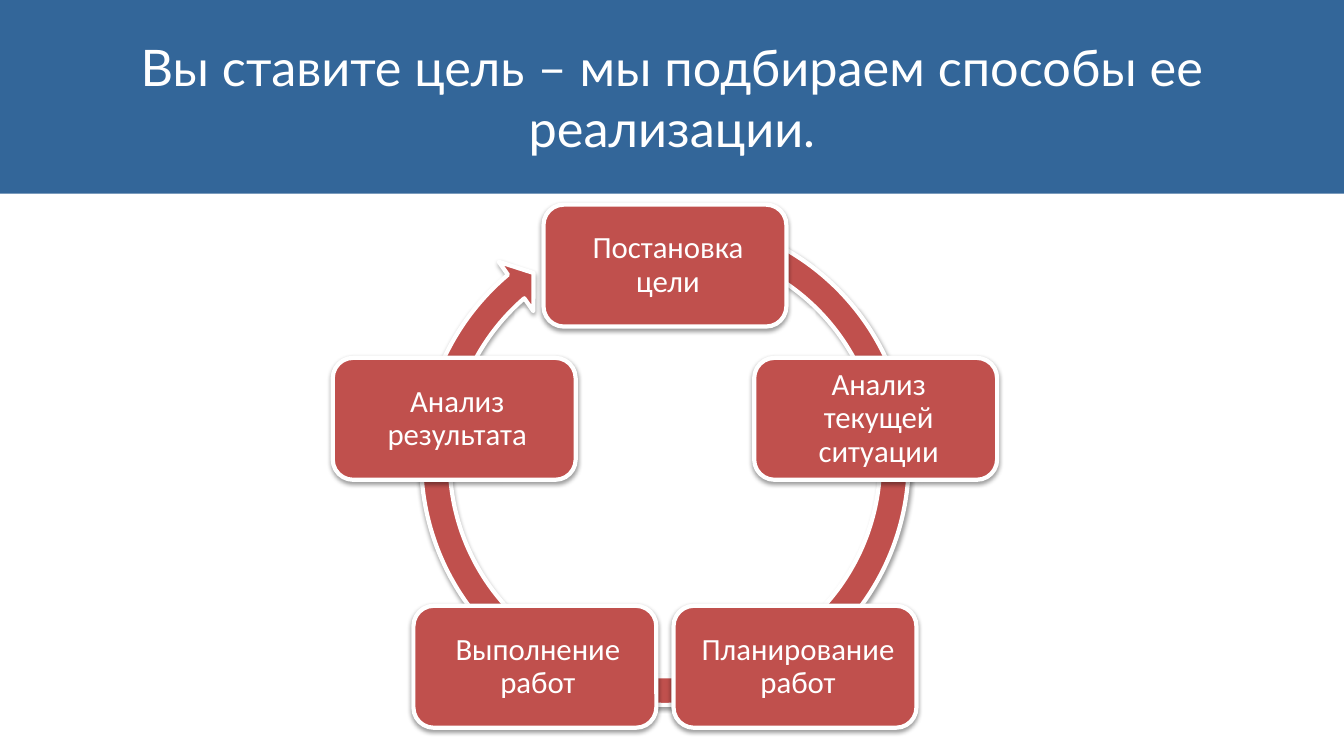
import math

import pptx
import pptx.dml.color
import pptx.enum.shapes
import pptx.enum.text
import pptx.oxml
import pptx.oxml.ns
import pptx.util

PX = 9144  # EMU per px, 100 px to the inch
SLIDE_W, SLIDE_H = 1333, 750
COLORS = {"banner": "336699", "node": "C0504D", "white": "FFFFFF", "shadow": "000000"}
SHAPES = pptx.enum.shapes.MSO_SHAPE

SHADOW_XML = (
    f'<a:outerShdw {pptx.oxml.ns.nsdecls("a")} blurRad="40000" dist="20000" '
    'dir="5400000" rotWithShape="0">'
    f'<a:srgbClr val="{COLORS["shadow"]}"><a:alpha val="38000"/></a:srgbClr>'
    "</a:outerShdw>"
)


def rgb(name):
    return pptx.dml.color.RGBColor.from_string(COLORS[name])


class CycleSlide:
    """Holds the slide and draws its elements in one style."""

    def __init__(self, prs):
        self.slide = prs.slides.add_slide(prs.slide_layouts[6])

    def shape(self, kind, box, fill):
        sp = self.slide.shapes.add_shape(kind, *(v * PX for v in box))
        sp.shadow.inherit = False
        sp.fill.solid()
        sp.fill.fore_color.rgb = rgb(fill)
        sp.line.fill.background()
        return sp

    def raised(self, kind, box):
        """A red shape with a white outline and a soft shadow."""
        sp = self.shape(kind, box, "node")
        sp.line.color.rgb = rgb("white")
        sp.line.width = pptx.util.Pt(3)
        effects = sp._element.spPr.find(pptx.oxml.ns.qn("a:effectLst"))
        effects.append(pptx.oxml.parse_xml(SHADOW_XML))
        return sp

    def text(self, sp, text, font, size, insets, spacing=1.0):
        tf = sp.text_frame
        tf.word_wrap = True
        tf.vertical_anchor = pptx.enum.text.MSO_ANCHOR.MIDDLE
        tf.margin_left, tf.margin_top, tf.margin_right, tf.margin_bottom = (
            v * PX for v in insets
        )
        p = tf.paragraphs[0]
        p.text = text
        p.alignment = pptx.enum.text.PP_ALIGN.CENTER
        p.line_spacing = spacing
        p.font.name = font
        p.font.size = pptx.util.Pt(size)
        p.font.color.rgb = rgb("white")

    def ring(self, box):
        sp = self.raised(SHAPES.CIRCULAR_ARROW, box)
        # Thickness, head angle, end angle, start angle, head width
        for i, value in enumerate((0.055, 3.31, 137.74, 173.87, 0.058)):
            sp.adjustments[i] = value

    def node(self, box, label):
        sp = self.raised(SHAPES.ROUNDED_RECTANGLE, box)
        self.text(sp, label, "Calibri", 22, (15, 15, 9, 15), 0.9)

    def banner(self, box, title):
        sp = self.shape(SHAPES.RECTANGLE, box, "banner")
        self.text(sp, title, "Lato", 36, (10, 5, 10, 5))


def main():
    prs = pptx.Presentation()
    prs.slide_width, prs.slide_height = SLIDE_W * PX, SLIDE_H * PX
    s = CycleSlide(prs)

    # Circular arrow behind the steps
    s.ring((402, 200, 515, 515))

    # Steps, clockwise from the top at equal angles
    steps = (
        "Постановка цели",
        "Анализ текущей ситуации",
        "Планирование работ",
        "Выполнение работ",
        "Анализ результата",
    )
    node_w, node_h, radius = 241, 121, 220
    mid_left, mid_top = 539, 423  # corner of a node placed at the ring's centre
    for i, label in enumerate(steps):
        angle = math.tau * i / len(steps)
        left = round(mid_left + radius * math.sin(angle))
        top = round(mid_top - radius * math.cos(angle))
        s.node((left, top, node_w, node_h), label)

    # Title banner
    s.banner((0, 0, SLIDE_W, 192), "Вы ставите цель – мы подбираем способы ее реализации.")

    prs.save("out.pptx")


if __name__ == "__main__":
    main()
